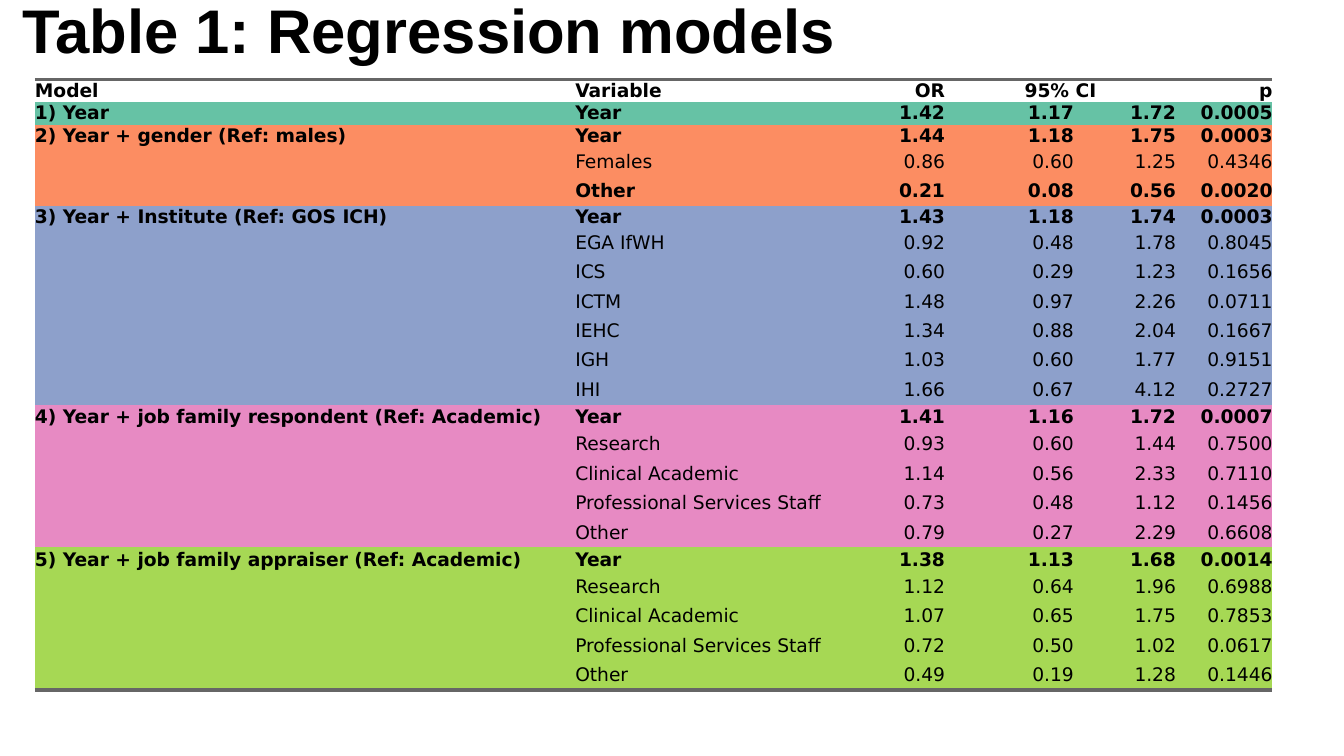
from dataclasses import dataclass

from lxml import etree
from pptx import Presentation
from pptx.dml.color import RGBColor
from pptx.enum.text import MSO_ANCHOR, PP_ALIGN
from pptx.oxml.ns import qn
from pptx.util import Pt

PX = 9525  # EMU per px, 96 px to the inch
LEFT, RIGHT, MID = PP_ALIGN.LEFT, PP_ALIGN.RIGHT, PP_ALIGN.CENTER
TOP, MIDDLE = MSO_ANCHOR.TOP, MSO_ANCHOR.MIDDLE
PLAIN = "{2D5ABB26-0587-4C30-8999-92F81FD0307C}"  # table style without grid


@dataclass(frozen=True)
class Theme:
    ink: str = "000000"
    rule: str = "666666"
    head: str = "Arial"
    body: str = "DejaVu Sans"
    big: int = 33
    small: int = 10
    line: int = 2


THEME = Theme()
COLS = (386, 185, 79, 92, 73, 69)
ALIGN = (LEFT, LEFT, RIGHT, RIGHT, RIGHT, RIGHT)
HEAD = ("Model", "Variable", "OR", "95% CI", "", "p")
HEAD_H, ROW_H = 16, 21

# Each model: name, fill, height of its first row, rows
MODELS = (
    ("1) Year", "66C2A5", 16, (
        ("Year", "1.42", "1.17", "1.72", "0.0005"),
    )),
    ("2) Year + gender (Ref: males)", "FC8D62", 16, (
        ("Year", "1.44", "1.18", "1.75", "0.0003"),
        ("Females", "0.86", "0.60", "1.25", "0.4346"),
        ("Other", "0.21", "0.08", "0.56", "0.0020"),
    )),
    ("3) Year + Institute (Ref: GOS ICH)", "8DA0CB", 16, (
        ("Year", "1.43", "1.18", "1.74", "0.0003"),
        ("EGA IfWH", "0.92", "0.48", "1.78", "0.8045"),
        ("ICS", "0.60", "0.29", "1.23", "0.1656"),
        ("ICTM", "1.48", "0.97", "2.26", "0.0711"),
        ("IEHC", "1.34", "0.88", "2.04", "0.1667"),
        ("IGH", "1.03", "0.60", "1.77", "0.9151"),
        ("IHI", "1.66", "0.67", "4.12", "0.2727"),
    )),
    ("4) Year + job family respondent (Ref: Academic)", "E78AC3", 18, (
        ("Year", "1.41", "1.16", "1.72", "0.0007"),
        ("Research", "0.93", "0.60", "1.44", "0.7500"),
        ("Clinical Academic", "1.14", "0.56", "2.33", "0.7110"),
        ("Professional Services Staff", "0.73", "0.48", "1.12", "0.1456"),
        ("Other", "0.79", "0.27", "2.29", "0.6608"),
    )),
    ("5) Year + job family appraiser (Ref: Academic)", "A6D854", 18, (
        ("Year", "1.38", "1.13", "1.68", "0.0014"),
        ("Research", "1.12", "0.64", "1.96", "0.6988"),
        ("Clinical Academic", "1.07", "0.65", "1.75", "0.7853"),
        ("Professional Services Staff", "0.72", "0.50", "1.02", "0.0617"),
        ("Other", "0.49", "0.19", "1.28", "0.1446"),
    )),
)


def style(para, face, size, bold):
    font = para.font
    font.name, font.size, font.bold = face, Pt(size), bold
    font.color.rgb = RGBColor.from_string(THEME.ink)


def add_title(slide, text, *place):
    frame = slide.shapes.add_textbox(*(n * PX for n in place)).text_frame
    frame.word_wrap = True
    frame.vertical_anchor = TOP
    frame.margin_left = frame.margin_right = 0
    frame.margin_top = frame.margin_bottom = 0
    para = frame.paragraphs[0]
    para.text = text
    para.line_spacing = 0.9
    style(para, THEME.head, THEME.big, True)


def fill_cell(cell, text, align, bold, fill):
    cell.margin_left = cell.margin_right = 0
    cell.margin_top = cell.margin_bottom = 0
    cell.vertical_anchor = MIDDLE
    para = cell.text_frame.paragraphs[0]
    para.text = text
    para.alignment = align
    style(para, THEME.body, THEME.small, bold)
    if not text:  # keeps an empty cell from stretching its row
        etree.SubElement(para._p, qn("a:endParaRPr"), sz=str(THEME.small * 100))
    if fill:
        cell.fill.solid()
        cell.fill.fore_color.rgb = RGBColor.from_string(fill)
    else:
        cell.fill.background()


def rule_row(row, side):
    """Draw a line along one side (lnT or lnB) of a table row."""
    for cell in row.cells:
        line = etree.Element(qn("a:" + side), w=str(Pt(THEME.line)))
        solid = etree.SubElement(line, qn("a:solidFill"))
        etree.SubElement(solid, qn("a:srgbClr"), val=THEME.rule)
        cell._tc.get_or_add_tcPr().insert(0, line)


def list_rows():
    """Yield height, texts, boldness and fill; bold marks p below 0.05."""
    yield HEAD_H, HEAD, True, None
    for name, fill, lead, rows in MODELS:
        for i, row in enumerate(rows):
            texts = ("" if i else name, *row)
            yield ROW_H if i else lead, texts, float(row[-1]) < 0.05, fill


def add_models(slide, left, top):
    rows = list(list_rows())
    high = sum(row[0] for row in rows)
    place = (n * PX for n in (left, top, sum(COLS), high))
    table = slide.shapes.add_table(len(rows), len(COLS), *place).table
    table.first_row = table.horz_banding = False
    table._tbl.tblPr.find(qn("a:tableStyleId")).text = PLAIN
    for col, width in zip(table.columns, COLS):
        col.width = width * PX
    for line, (height, texts, bold, fill) in zip(table.rows, rows):
        line.height = height * PX
        for cell, text, align in zip(line.cells, texts, ALIGN):
            fill_cell(cell, text, align, bold, fill)
    span = table.cell(0, 3)
    span.merge(table.cell(0, 4))
    span.text_frame.paragraphs[0].alignment = MID
    rule_row(table.rows[0], "lnT")
    rule_row(table.rows[len(rows) - 1], "lnB")


def main():
    deck = Presentation()
    deck.slide_width, deck.slide_height = 960 * PX, 540 * PX
    slide = deck.slides.add_slide(deck.slide_layouts[6])
    add_title(slide, "Table 1: Regression models", 16, 0, 851, 108)
    add_models(slide, 25, 57)
    deck.save("out.pptx")


if __name__ == "__main__":
    main()
